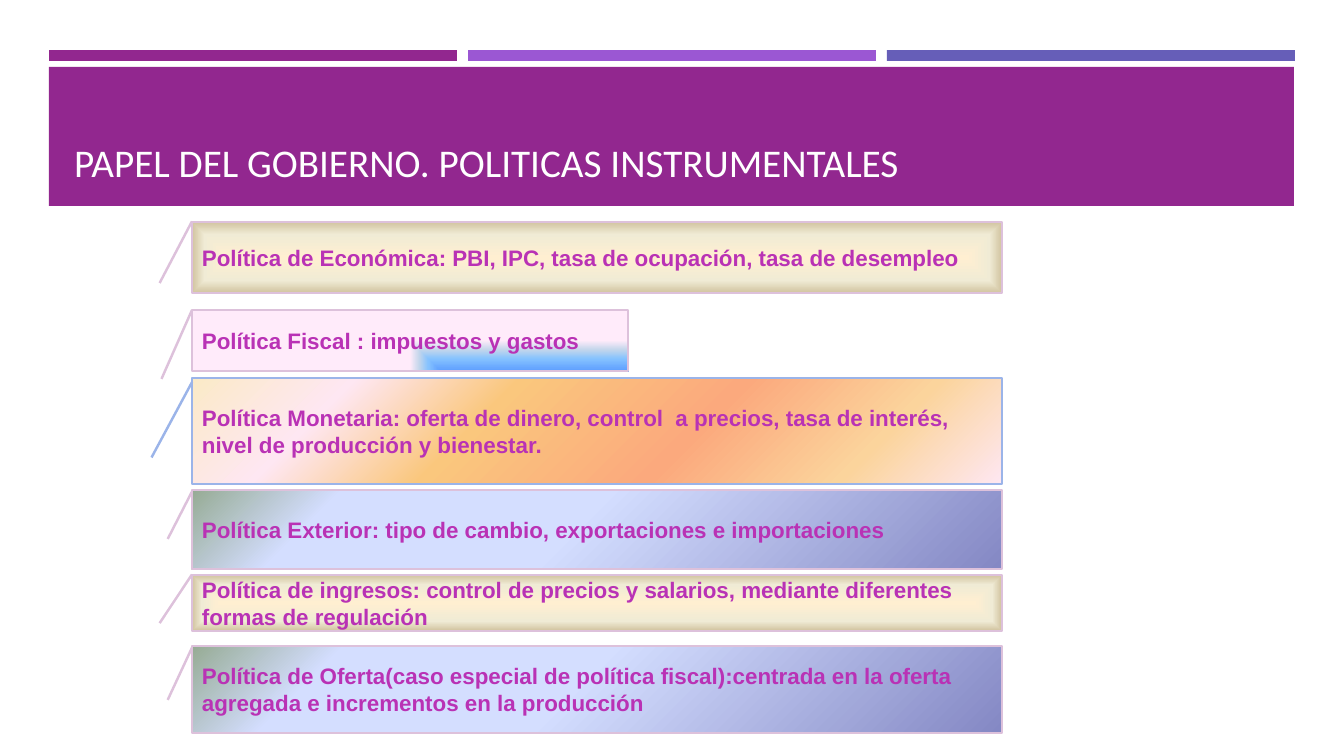
from lxml.etree import SubElement
from pptx import Presentation
from pptx.dml.color import RGBColor
from pptx.enum.shapes import MSO_SHAPE as SHAPE
from pptx.enum.text import MSO_ANCHOR as ANCHOR, MSO_AUTO_SIZE as AUTO, PP_ALIGN as ALIGN
from pptx.oxml.ns import qn
from pptx.util import Emu, Pt

TITLE = "PAPEL DEL GOBIERNO. POLITICAS INSTRUMENTALES"
BARS = ["92278F", "9B57D3", "665EB8"]
PINK, BLUE = "DDC1DB", "9BB4E9"

CREAM = dict(
    stops=[(0, "FFEFD1"), (65, "F0EBD5"), (100, "D1C39F")],
    kind="shape", focus=(50, 50, 50, 50))
SKY = dict(
    stops=[(0, "5E9EFF"), (40, "85C2FF"), (70, "C4D6EB"), (100, "FFEBFA")],
    kind="rect", focus=(100, 100, 0, 0))
SUNSET = dict(
    stops=[(0, "FBEAC7"), (18, "FEE7F2"), (36, "FAC77D"),
           (61, "FBA97D"), (82, "FBD49C"), (100, "FEE7F2")],
    angle=45)
DUSK = dict(
    stops=[(0, "8488C4"), (53, "D4DEFF"), (83, "D4DEFF"), (100, "96AB94")],
    kind="circle", focus=(100, 100, 0, 0))

CREAM_TAIL = (-0.01, 0, 0.86, -0.04)
DUSK_TAIL = (0.02, 0, 0.62, -0.03)
WIDE, NARROW = 810, 436
POLICIES = [
    ("Política de Económica: PBI, IPC, tasa de ocupación, tasa de desempleo",
     222, WIDE, 71, CREAM, PINK, CREAM_TAIL),
    ("Política Fiscal : impuestos y gastos",
     310, NARROW, 61, SKY, PINK, (0, 0, 1.13, -0.07)),
    ("Política Monetaria: oferta de dinero, control  a precios, tasa de interés, "
     "nivel de producción y bienestar.",
     378, WIDE, 106, SUNSET, BLUE, (0.04, 0, 0.75, -0.05)),
    ("Política Exterior: tipo de cambio, exportaciones e importaciones",
     490, WIDE, 79, DUSK, PINK, DUSK_TAIL),
    ("Política de ingresos: control de precios y salarios, mediante diferentes "
     "formas de regulación",
     575, WIDE, 56, CREAM, PINK, CREAM_TAIL),
    ("Política de Oferta(caso especial de política fiscal):centrada en la oferta "
     "agregada e incrementos en la producción",
     646, WIDE, 87, DUSK, PINK, DUSK_TAIL),
]


def px(n):
    return Emu(round(n * 914400 / 100.8))


def rgb(color):
    return RGBColor.from_string(color)


def add_shape(kind, x, y, w, h):
    s = slide.shapes.add_shape(kind, px(x), px(y), px(w), px(h))
    s.shadow.inherit = False
    return s


def add_rect(x, y, w, h, color):
    s = add_shape(SHAPE.RECTANGLE, x, y, w, h)
    s.fill.solid()
    s.fill.fore_color.rgb = rgb(color)
    s.line.fill.background()


def set_gradient(s, stops, kind=None, focus=None, angle=0):
    s.fill.gradient()
    grad = s._element.spPr.find(qn("a:gradFill"))
    grad.clear()
    grad.set("rotWithShape", "1")
    stop_list = SubElement(grad, qn("a:gsLst"))
    for pos, color in stops:
        stop = SubElement(stop_list, qn("a:gs"), pos=str(pos * 1000))
        SubElement(stop, qn("a:srgbClr"), val=color)
    if kind:
        shade = SubElement(grad, qn("a:path"), {"path": kind})
        sides = {side: str(v * 1000) for side, v in zip("ltrb", focus)}
        SubElement(shade, qn("a:fillToRect"), sides)
    else:
        SubElement(grad, qn("a:lin"), ang=str(angle * 60000), scaled="1")


def set_text(s, text, anchor, font, size, color, bold):
    tf = s.text_frame
    tf.text = text
    tf.word_wrap = True
    tf.auto_size = AUTO.NONE
    tf.vertical_anchor = anchor
    p = tf.paragraphs[0]
    p.alignment = ALIGN.LEFT
    f = p.runs[0].font
    f.name, f.size, f.bold = font, Pt(size), bold
    f.color.rgb = rgb(color)
    return p


prs = Presentation()
prs.slide_width, prs.slide_height = px(1344), px(756)
slide = prs.slides.add_slide(prs.slide_layouts[5])

for i, color in enumerate(BARS):
    add_rect(49 + 419 * i, 50, 408, 11, color)
add_rect(49, 67, 1245, 139, BARS[0])

title = slide.shapes.title
title.left, title.top, title.width, title.height = px(64), px(81), px(1216), px(109)
p = set_text(title, TITLE, ANCHOR.BOTTOM, "Calibri", 28, "FFFFFF", False)
p.line_spacing = 2.0
slide.shapes._spTree.append(title._element)

for text, y, w, h, gradient, border, tail in POLICIES:
    s = add_shape(SHAPE.LINE_CALLOUT_1, 192, y, w, h)
    for i, value in enumerate(tail):
        s.adjustments[i] = value
    set_gradient(s, **gradient)
    s.line.color.rgb = rgb(border)
    s.line.width = Pt(1.75)
    set_text(s, text, ANCHOR.MIDDLE, "Arial", 16, "B932B5", True)

prs.save("out.pptx")
